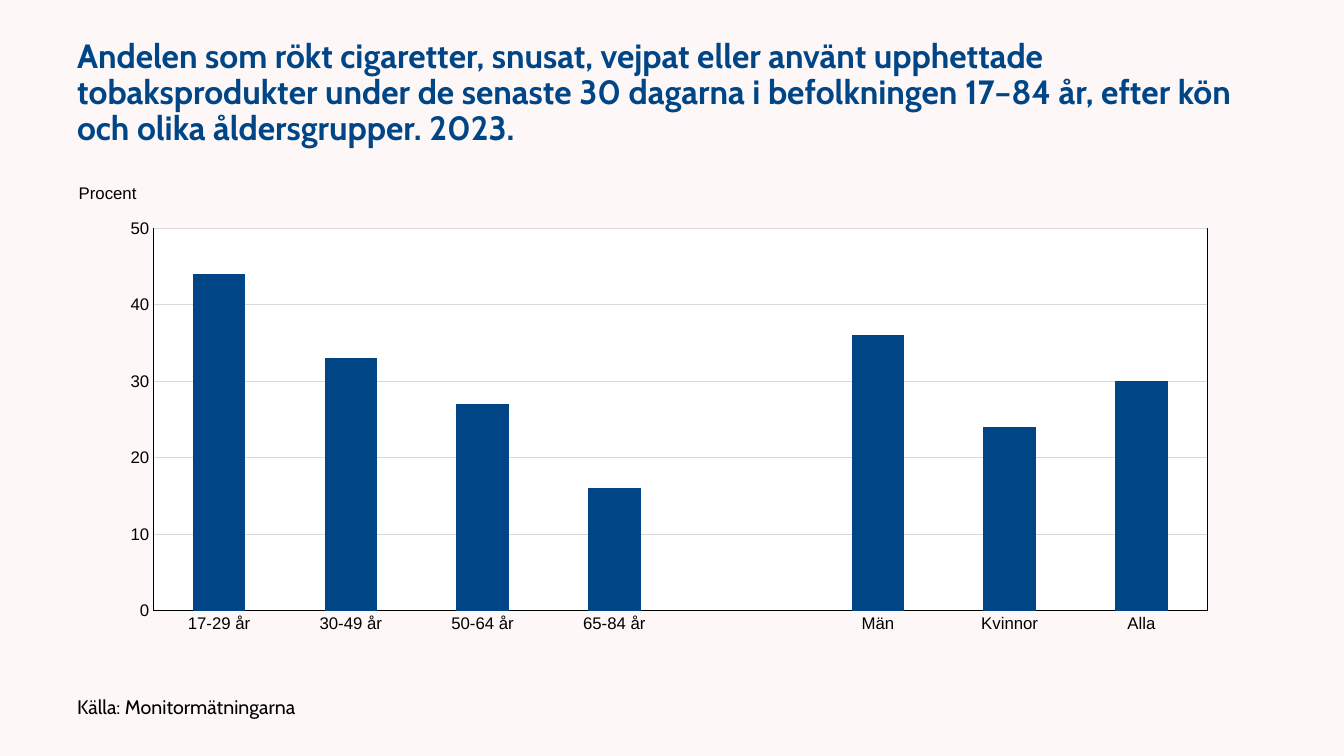
from dataclasses import dataclass

from lxml.etree import SubElement
from pptx import Presentation
from pptx.chart.data import CategoryChartData
from pptx.dml.color import RGBColor
from pptx.enum.chart import XL_CHART_TYPE as ChartType, XL_TICK_MARK as TickMark
from pptx.enum.text import MSO_ANCHOR as Anchor
from pptx.oxml import parse_xml
from pptx.oxml.ns import nsdecls, qn
from pptx.util import Emu, Pt

EMU_PER_PX = 9525
BACKGROUND = RGBColor(0xFE, 0xF7, 0xF7)
BLUE = RGBColor(0x00, 0x46, 0x87)
BLACK = RGBColor(0x00, 0x00, 0x00)
GRID_GREY = RGBColor(0xD9, 0xD9, 0xD9)
LINE_WIDTH = Pt(0.75)

SHARES = {
    "17-29 år": 44,
    "30-49 år": 33,
    "50-64 år": 27,
    "65-84 år": 16,
    "": None,
    "Män": 36,
    "Kvinnor": 24,
    "Alla": 30,
}


@dataclass(frozen=True)
class Box:
    left: int
    top: int
    width: int
    height: int

    def emu(self) -> tuple[Emu, ...]:
        sides = (self.left, self.top, self.width, self.height)
        return tuple(Emu(side * EMU_PER_PX) for side in sides)


@dataclass(frozen=True)
class Caption:
    text: str
    box: Box
    size: int
    color: RGBColor
    bold: bool


CAPTIONS = (
    Caption(
        "Andelen som rökt cigaretter, snusat, vejpat eller använt upphettade "
        "tobaksprodukter under de senaste 30 dagarna i befolkningen 17–84 år, "
        "efter kön och olika åldersgrupper. 2023.",
        Box(64, 29, 1152, 120), 24, BLUE, True,
    ),
    Caption("Källa: Monitormätningarna", Box(64, 656, 576, 36), 14, BLACK, False),
)
CHART_BOX = Box(64, 162, 1154, 475)


def set_font(font, name: str, size: int, color: RGBColor, bold: bool = False) -> None:
    for key, value in {"name": name, "size": Pt(size), "bold": bold}.items():
        setattr(font, key, value)
    font.color.rgb = color


def set_line(line, color: RGBColor) -> None:
    line.color.rgb = color
    line.width = LINE_WIDTH


def add_caption(slide, caption: Caption) -> None:
    frame = slide.shapes.add_textbox(*caption.box.emu()).text_frame
    frame.word_wrap = True
    frame.vertical_anchor = Anchor.MIDDLE
    paragraph = frame.paragraphs[0]
    paragraph.line_spacing = 0.9
    run = paragraph.add_run()
    run.text = caption.text
    set_font(run.font, "Cabin", caption.size, caption.color, caption.bold)


def place(element, index: int, **settings) -> None:
    """Give a chart part a manual layout as its child at the given index."""
    for old in element.findall(qn("c:layout")):
        element.remove(old)
    layout = parse_xml(f"<c:layout {nsdecls('c')}/>")
    manual = SubElement(layout, qn("c:manualLayout"))
    for tag, value in settings.items():
        SubElement(manual, qn(f"c:{tag}")).set("val", str(value))
    element.insert(index, layout)


def style_plot_area(chart) -> None:
    plot_area = chart._chartSpace.chart.plotArea
    place(plot_area, 0, layoutTarget="inner", xMode="edge", yMode="edge",
          x=0.071, y=0.117, w=0.87, h=0.767)
    plot_area.append(parse_xml(
        f"<c:spPr {nsdecls('c', 'a')}>"
        '<a:solidFill><a:srgbClr val="FFFFFF"/></a:solidFill>'
        f'<a:ln w="{LINE_WIDTH}"><a:solidFill><a:srgbClr val="{BLACK}"/></a:solidFill></a:ln>'
        "</c:spPr>"
    ))


def style_axes(chart) -> None:
    for axis in (chart.category_axis, chart.value_axis):
        axis.major_tick_mark = axis.minor_tick_mark = TickMark.NONE
        set_line(axis.format.line, BLACK)
        set_font(axis.tick_labels.font, "Arial", 12, BLACK)

    percent_axis = chart.value_axis
    scale = {"minimum_scale": 0, "maximum_scale": 50, "major_unit": 10}
    for key, value in scale.items():
        setattr(percent_axis, key, value)
    set_line(percent_axis.major_gridlines.format.line, GRID_GREY)
    percent_axis.tick_labels.number_format = "0"
    percent_axis.tick_labels.number_format_is_linked = False

    unit_title = percent_axis.axis_title
    unit_frame = unit_title.text_frame
    unit = unit_frame.paragraphs[0].add_run()
    unit.text = "Procent"
    set_font(unit.font, "Arial", 12, BLACK)
    body = unit_frame._txBody.bodyPr
    body.set("rot", "0")
    body.set("vert", "horz")
    place(unit_title._element, 1, xMode="edge", yMode="edge", x=0.007, y=0.02)


def add_share_chart(slide) -> None:
    data = CategoryChartData(number_format="0")
    data.categories = list(SHARES)
    data.add_series("Andel", list(SHARES.values()))
    chart = slide.shapes.add_chart(
        ChartType.COLUMN_CLUSTERED, *CHART_BOX.emu(), data).chart
    chart.has_legend = chart.has_title = False
    set_font(chart.font, "Arial", 12, BLACK)

    plot = chart.plots[0]
    plot.gap_width = 150
    plot.vary_by_categories = False
    fill = plot.series[0].format.fill
    fill.solid()
    fill.fore_color.rgb = BLUE

    style_axes(chart)
    style_plot_area(chart)


def main() -> None:
    deck = Presentation()
    deck.slide_width = Emu(1280 * EMU_PER_PX)
    deck.slide_height = Emu(720 * EMU_PER_PX)
    slide = deck.slides.add_slide(deck.slide_layouts[6])
    background = slide.background.fill
    background.solid()
    background.fore_color.rgb = BACKGROUND
    for caption in CAPTIONS:
        add_caption(slide, caption)
    add_share_chart(slide)
    deck.save("out.pptx")


if __name__ == "__main__":
    main()
